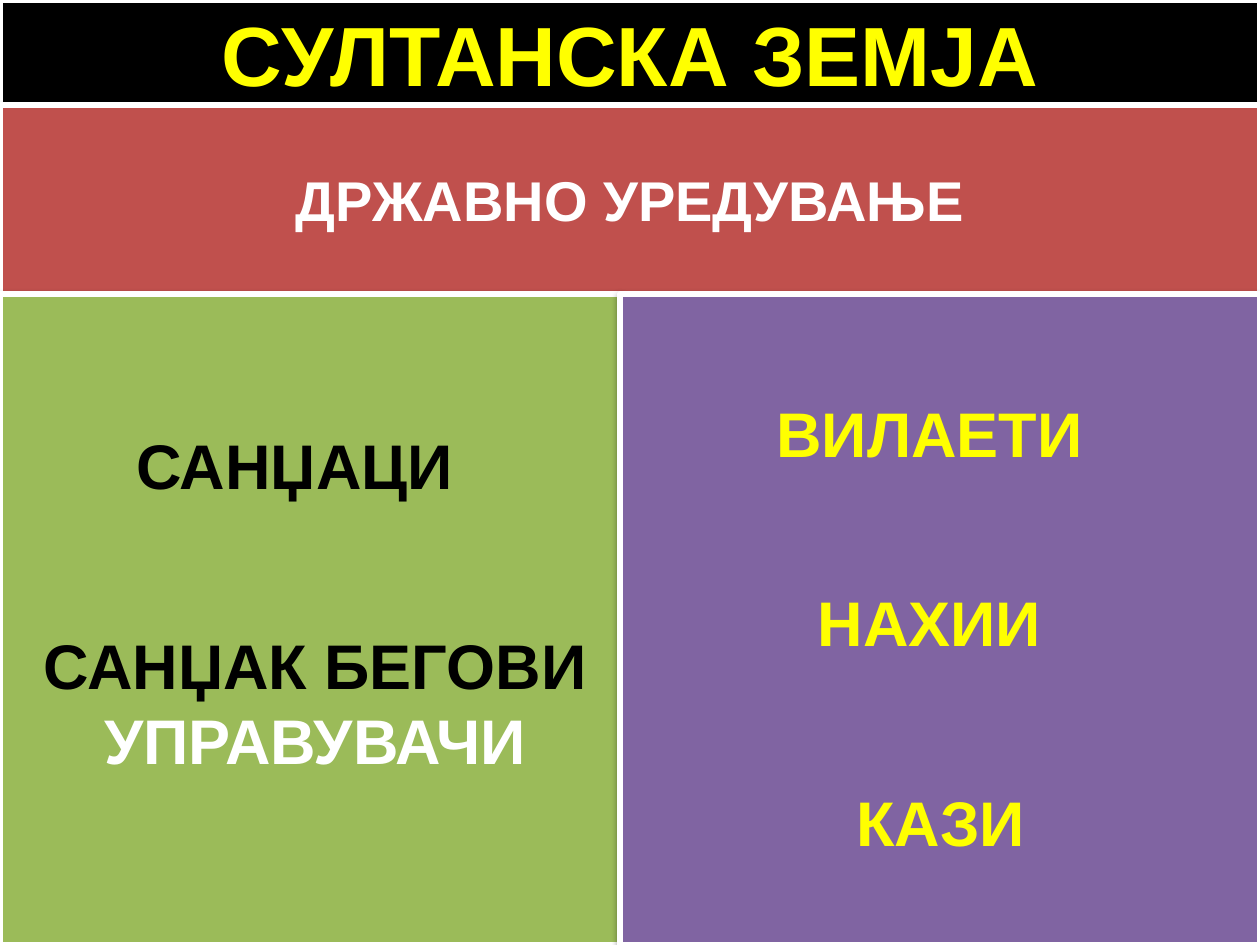
from lxml import etree
from pptx import Presentation
from pptx.dml.color import RGBColor
from pptx.enum.shapes import MSO_SHAPE
from pptx.enum.text import MSO_ANCHOR, MSO_AUTO_SIZE, PP_ALIGN
from pptx.oxml.ns import qn
from pptx.util import Pt

RECT = MSO_SHAPE.RECTANGLE
MIDDLE = MSO_ANCHOR.MIDDLE
CENTER = PP_ALIGN.CENTER
NO_FIT = MSO_AUTO_SIZE.NONE
GROW = MSO_AUTO_SIZE.SHAPE_TO_FIT_TEXT

BLACK, WHITE, YELLOW = "000000", "FFFFFF", "FFFF00"
RED, GREEN, PURPLE = "C0504D", "9BBB59", "8064A2"

W, H = 1260, 945
TITLE_H, HEAD_BOTTOM, SPLIT = 105, 294, 620

TITLE = [("СУЛТАНСКА ЗЕМЈА", YELLOW)]
HEADING = [("ДРЖАВНО УРЕДУВАЊЕ", WHITE)]

# left, top, right, bottom, fill, text runs
PANELS = [
    (0, TITLE_H, W, H, BLACK, []),
    (0, TITLE_H, W, HEAD_BOTTOM, RED, HEADING),
    (0, HEAD_BOTTOM, SPLIT, H, GREEN, []),
    (SPLIT, HEAD_BOTTOM, W, H, PURPLE, []),
]

# left, top, width, height, text runs
LABELS = [
    (53, 420, 483, 89, [("САНЏАЦИ", BLACK)]),
    (21, 620, 588, 165, [("САНЏАК БЕГОВИ ", BLACK), ("УПРАВУВАЧИ", WHITE)]),
    (651, 388, 557, 89, [("ВИЛАЕТИ", YELLOW)]),
    (651, 577, 557, 89, [("НАХИИ", YELLOW)]),
    (662, 777, 557, 89, [("КАЗИ", YELLOW)]),
]


def px(n):
    return round(n * 914400 / 126)


def rgb(value):
    return RGBColor.from_string(value)


def add_shadow(sp):
    effects = etree.SubElement(sp._element.spPr, qn("a:effectLst"))
    shadow = etree.SubElement(effects, qn("a:outerShdw"), blurRad="40000",
                              dist="20000", dir="5400000", rotWithShape="0")
    color = etree.SubElement(shadow, qn("a:srgbClr"), val=BLACK)
    etree.SubElement(color, qn("a:alpha"), val="38000")


def style_panel(sp, fill):
    sp.fill.solid()
    sp.fill.fore_color.rgb = rgb(fill)
    sp.line.color.rgb = rgb(WHITE)
    sp.line.width = Pt(3)
    add_shadow(sp)


def write(sp, runs, size, fit=NO_FIT):
    tf = sp.text_frame
    tf.word_wrap = True
    tf.auto_size = fit
    p = tf.paragraphs[0]
    p.alignment = CENTER
    for text, color in runs:
        r = p.add_run()
        r.text = text
        r.font.name = "Arial"
        r.font.size = Pt(size)
        r.font.bold = True
        r.font.color.rgb = rgb(color)


prs = Presentation()
prs.slide_width, prs.slide_height = px(W), px(H)
s = prs.slides.add_slide(prs.slide_layouts[5])

title = s.shapes.title
title.left, title.top, title.width, title.height = 0, 0, px(W), px(TITLE_H)
style_panel(title, BLACK)
write(title, TITLE, 48)
title.text_frame.vertical_anchor = MIDDLE

for left, top, right, bottom, fill, runs in PANELS:
    sp = s.shapes.add_shape(RECT, px(left), px(top), px(right - left), px(bottom - top))
    style_panel(sp, fill)
    if runs:
        write(sp, runs, 32)
        sp.text_frame.vertical_anchor = MIDDLE

for left, top, width, height, runs in LABELS:
    sp = s.shapes.add_textbox(px(left), px(top), px(width), px(height))
    write(sp, runs, 36, GROW)

prs.save("out.pptx")
